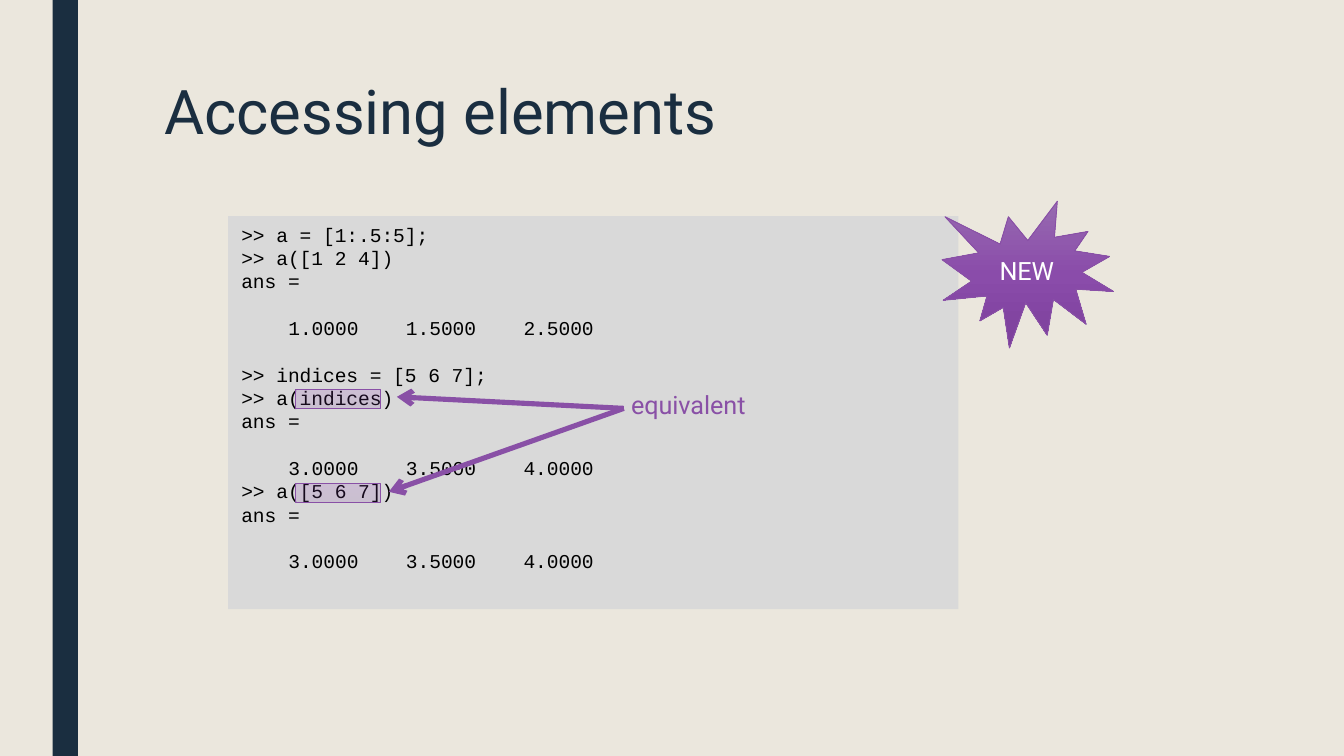
from lxml import etree
from pptx import Presentation
from pptx.dml.color import RGBColor
from pptx.enum.shapes import MSO_CONNECTOR, MSO_SHAPE
from pptx.enum.text import MSO_ANCHOR, PP_ALIGN
from pptx.oxml.ns import qn
from pptx.util import Pt

RECT = MSO_SHAPE.RECTANGLE
BURST = MSO_SHAPE.EXPLOSION1
LINE = MSO_CONNECTOR.STRAIGHT
TOP, MIDDLE = MSO_ANCHOR.TOP, MSO_ANCHOR.MIDDLE
LEFT, CENTER = PP_ALIGN.LEFT, PP_ALIGN.CENTER

CREAM = RGBColor(0xEB, 0xE7, 0xDD)
NAVY = RGBColor(0x1A, 0x2E, 0x40)
GRAY = RGBColor(0xD9, 0xD9, 0xD9)
BLACK = RGBColor(0, 0, 0)
WHITE = RGBColor(0xFF, 0xFF, 0xFF)
PURPLE = RGBColor(0x89, 0x50, 0xA6)
TINT = [(0, RGBColor(0x81, 0x46, 0xA3)), (100, RGBColor(0x90, 0x3B, 0xBC))]
GLOW = [
    (0, RGBColor(0x97, 0x6A, 0xB0)),
    (50, RGBColor(0x8A, 0x4C, 0xAA)),
    (100, RGBColor(0x7C, 0x3F, 0x9B)),
]

SANS, MONO = "Roboto", "Courier New"
PITCH = 12.5
STOPS = (25.2, 88.2, 151.2)
FIRST = "\t1.0000\t1.5000\t2.5000"
LAST = "\t3.0000\t3.5000\t4.0000"
CODE = [
    ">> a = [1:.5:5];",
    ">> a([1 2 4])",
    "ans =",
    FIRST,
    ">> indices = [5 6 7];",
    ">> a(indices)",
    "ans =",
    LAST,
    ">> a([5 6 7])",
    "ans =",
    LAST,
]


def assign(item, values):
    """Set attributes from a dict of values."""
    for name, value in values.items():
        setattr(item, name, value)


def write(para, text, color, **font):
    """Add one styled run to a paragraph."""
    run = para.add_run()
    run.text = text
    assign(run.font, font)
    run.font.color.rgb = color


def add_shape(slide, kind, box, fill=None, line=None):
    """Add a flat preset shape."""
    shape = slide.shapes.add_shape(kind, *map(Pt, box))
    shape.shadow.inherit = False
    if fill is not None:
        shape.fill.solid()
        shape.fill.fore_color.rgb = fill
    if line is None:
        shape.line.fill.background()
    else:
        shape.line.color.rgb = line
        shape.line.width = Pt(0.5)
    return shape


def shade(shape, stops, angle, alpha=100):
    """Fill a shape with a linear gradient."""
    shape.fill.gradient()
    shape.fill.gradient_angle = angle
    ramp = shape.fill._xPr.find(qn("a:gradFill")).find(qn("a:gsLst"))
    for old in list(ramp):
        ramp.remove(old)
    for pos, color in stops:
        stop = etree.SubElement(ramp, qn("a:gs"), pos=str(pos * 1000))
        tone = etree.SubElement(stop, qn("a:srgbClr"), val=str(color))
        if alpha < 100:
            etree.SubElement(tone, qn("a:alpha"), val=str(alpha * 1000))


def add_label(slide, box, text, size, color, spacing=1.0):
    """Add a one-line text box."""
    frame = slide.shapes.add_textbox(*map(Pt, box)).text_frame
    frame.word_wrap = True
    para = frame.paragraphs[0]
    para.line_spacing = spacing
    write(para, text, color, name=SANS, size=Pt(size))


def add_code(slide, box):
    """Add the console listing, with output set on tab stops."""
    frame = add_shape(slide, RECT, box, GRAY).text_frame
    assign(frame, {"word_wrap": True, "vertical_anchor": TOP})
    for row, text in enumerate(CODE):
        para = frame.add_paragraph() if row else frame.paragraphs[0]
        output = text.startswith("\t")
        gap = output or CODE[row - 1] == FIRST
        assign(para, {
            "alignment": LEFT,
            "line_spacing": Pt(PITCH),
            "space_before": Pt(PITCH if gap else 0),
        })
        if output:
            tabs = etree.SubElement(para._p.get_or_add_pPr(), qn("a:tabLst"))
            for stop in STOPS:
                etree.SubElement(tabs, qn("a:tab"), pos=str(Pt(stop)), algn="l")
        write(para, text, BLACK, name=MONO, size=Pt(10.5))


def add_arrow(slide, start, end):
    """Add a purple line with an open arrowhead at its end."""
    arrow = slide.shapes.add_connector(LINE, *map(Pt, start + end))
    arrow.line.color.rgb = PURPLE
    arrow.line.width = Pt(2.75)
    etree.SubElement(arrow.line._get_or_add_ln(), qn("a:tailEnd"), type="arrow")
    etree.SubElement(arrow._element.spPr, qn("a:effectLst"))


def add_badge(slide, box, text):
    """Add a starburst with centred text."""
    badge = add_shape(slide, BURST, box, line=PURPLE)
    shade(badge, GLOW, 270)
    frame = badge.text_frame
    assign(frame, {"word_wrap": True, "vertical_anchor": MIDDLE})
    para = frame.paragraphs[0]
    para.alignment = CENTER
    write(para, text, WHITE, name=SANS, size=Pt(13.5))


def main():
    """Build the slide and save it."""
    deck = Presentation()
    assign(deck, {"slide_width": Pt(720), "slide_height": Pt(405)})
    slide = deck.slides.add_slide(deck.slide_layouts[6])
    back = slide.background.fill
    back.solid()
    back.fore_color.rgb = CREAM

    add_shape(slide, RECT, (28.2, 0, 13.6, 405), NAVY)
    add_label(slide, (80.8, 40.3, 567, 88), "Accessing elements", 33, NAVY, 0.89)
    add_code(slide, (122.2, 115.8, 391.3, 210.6))
    for top in (208.6, 259):
        mark = add_shape(slide, RECT, (158.3, top, 45.8, 10.2), line=PURPLE)
        shade(mark, TINT, 90, 16)
    for end in ((212.6, 212.6), (208.3, 263.5)):
        add_arrow(slide, (334.2, 218.8), end)
    add_label(slide, (331, 205.2, 88.6, 23.8), "equivalent", 13.5, PURPLE)
    add_badge(slide, (504.7, 107.8, 91.8, 78.6), "NEW")
    deck.save("out.pptx")


if __name__ == "__main__":
    main()
